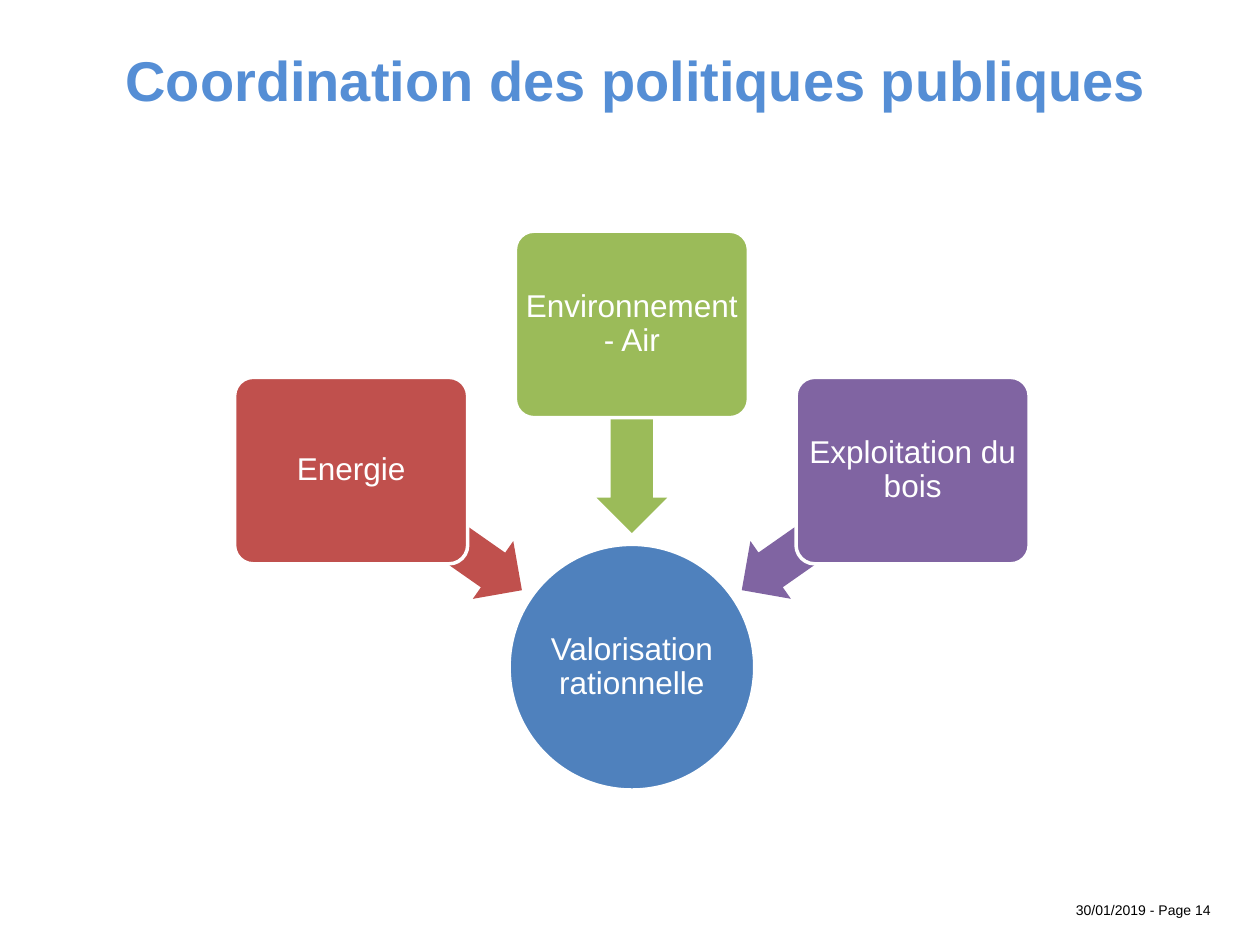
import math
from dataclasses import dataclass

import pptx
import pptx.dml.color
import pptx.enum.shapes
import pptx.enum.text
import pptx.util
from pptx.util import Inches

SHAPES = pptx.enum.shapes.MSO_SHAPE
ALIGN = pptx.enum.text.PP_ALIGN
ANCHOR = pptx.enum.text.MSO_ANCHOR


@dataclass(frozen=True)
class Theme:
    font: str = "Arial"
    title_size: int = 32
    label_size: int = 18
    footer_size: int = 8
    title: str = "558ED5"
    white: str = "FFFFFF"
    black: str = "000000"
    hub: str = "4F81BD"
    energy: str = "C0504D"
    environment: str = "9BBB59"
    wood: str = "8064A2"


THEME = Theme()

# Label, colour and direction from the hub, in degrees clockwise from the right
POLICIES = [
    ("Energie", THEME.energy, 215),
    ("Environnement - Air", THEME.environment, 270),
    ("Exploitation du bois", THEME.wood, 325),
]


def rgb(value):
    return pptx.dml.color.RGBColor.from_string(value)


def write(shape, text, size, color, align, inset=0.0, bold=False):
    frame = shape.text_frame
    frame.word_wrap = True
    frame.vertical_anchor = ANCHOR.MIDDLE
    frame.margin_left = frame.margin_right = Inches(inset)
    frame.margin_top = frame.margin_bottom = Inches(inset)
    paragraph = frame.paragraphs[0]
    paragraph.text = text
    paragraph.alignment = align
    paragraph.font.name = THEME.font
    paragraph.font.size = pptx.util.Pt(size)
    paragraph.font.bold = bold
    paragraph.font.color.rgb = rgb(color)
    return paragraph


def add_centred(slide, kind, center_x, center_y, width, height, fill):
    shape = slide.shapes.add_shape(
        kind, center_x - width // 2, center_y - height // 2, width, height)
    shape.shadow.inherit = False
    shape.fill.solid()
    shape.fill.fore_color.rgb = rgb(fill)
    shape.line.fill.background()
    return shape


def label(shape, text, inset):
    shape.line.color.rgb = rgb(THEME.white)
    shape.line.width = pptx.util.Pt(2)
    paragraph = write(shape, text, THEME.label_size, THEME.white, ALIGN.CENTER, inset)
    paragraph.line_spacing = 0.9


def add_title(slide, left, top, width, height):
    title = slide.shapes.add_textbox(left, top, width, height)
    write(title, "Coordination des politiques publiques", THEME.title_size,
          THEME.title, ALIGN.CENTER, bold=True)


def add_footer(slide, left, top, width, height):
    footer = slide.shapes.add_textbox(left, top, width, height)
    write(footer, "30/01/2019 - Page 14", THEME.footer_size, THEME.black,
          ALIGN.RIGHT, inset=0.1)


def add_converging_policies(slide, left, top, width, height):
    """Place the hub at the bottom of the box and the policies around it."""
    hub_size = Inches(1.95)
    hub_x = left + width // 2
    hub_y = top + height - hub_size // 2
    hub = add_centred(slide, SHAPES.OVAL, hub_x, hub_y, hub_size, hub_size, THEME.hub)
    label(hub, "Valorisation rationnelle", 0.01)

    def around_hub(radius, degrees):
        angle = math.radians(degrees)
        return (hub_x + round(radius * math.cos(angle)),
                hub_y + round(radius * math.sin(angle)))

    for text, color, degrees in POLICIES:
        arrow = add_centred(slide, SHAPES.LEFT_ARROW,
                            *around_hub(Inches(1.89), degrees),
                            Inches(1.65), Inches(0.56), color)
        arrow.adjustments[0] = 0.6
        arrow.adjustments[1] = 0.5
        arrow.rotation = degrees

        policy = add_centred(slide, SHAPES.ROUNDED_RECTANGLE,
                             *around_hub(Inches(2.72), degrees),
                             Inches(1.85), Inches(1.48), color)
        policy.adjustments[0] = 0.1
        label(policy, text, 0.03)


def main():
    presentation = pptx.Presentation()
    presentation.slide_width = Inches(10)
    presentation.slide_height = Inches(7.5)
    slide = presentation.slides.add_slide(presentation.slide_layouts[6])
    add_footer(slide, Inches(8.34), Inches(7.1), Inches(1.37), Inches(0.24))
    add_converging_policies(slide, Inches(1.86), Inches(1.83), Inches(6.31), Inches(4.44))
    add_title(slide, Inches(0.15), Inches(0.35), Inches(9.8), Inches(0.55))
    presentation.save("out.pptx")


if __name__ == "__main__":
    main()
